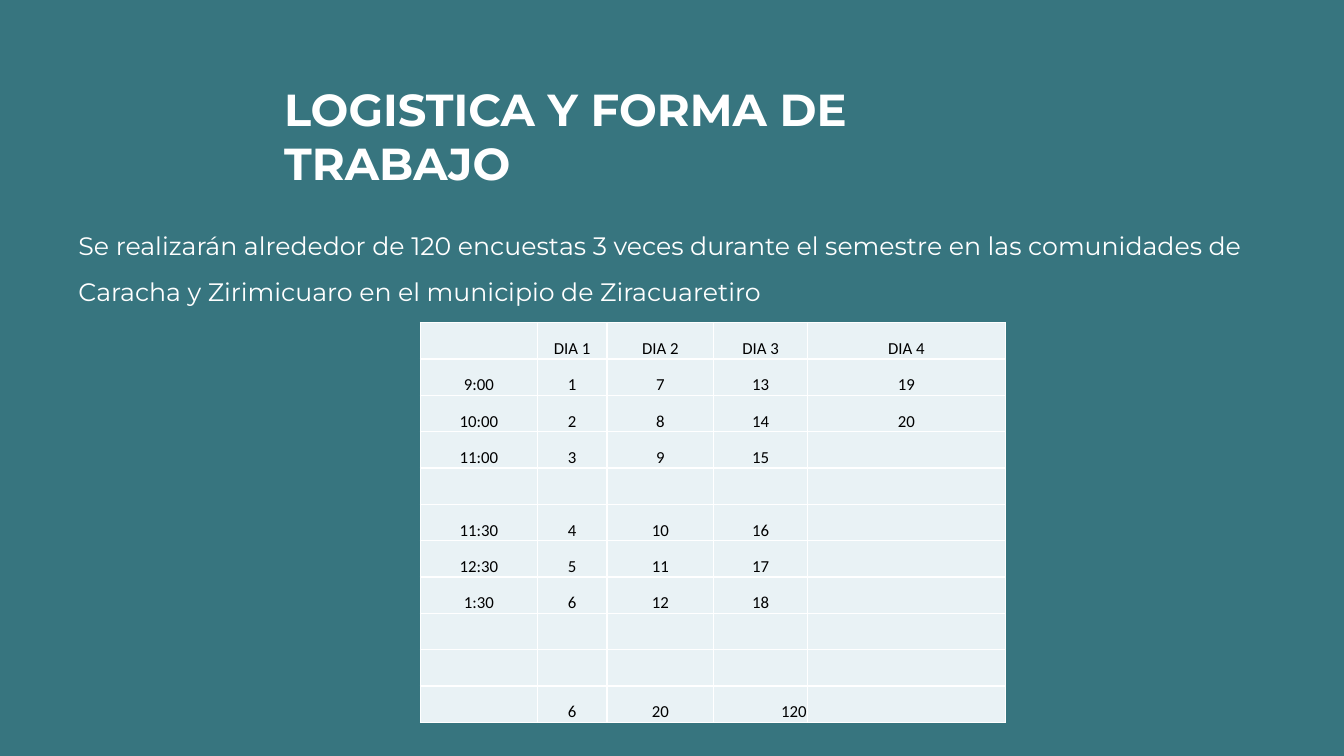
import pptx
import pptx.dml.color
import pptx.enum.text
import pptx.oxml.ns
import pptx.util
from lxml import etree
from pptx.util import Inches

COLORS = {"background": "37757F", "light": "FFFFFF", "cell": "E9F2F5", "dark": "000000"}
ALIGN = pptx.enum.text.PP_ALIGN


def rgb(name):
    return pptx.dml.color.RGBColor.from_string(COLORS[name])


class SlideBuilder:
    def __init__(self, presentation):
        self.slide = presentation.slides.add_slide(presentation.slide_layouts[6])
        fill = self.slide.background.fill
        fill.solid()
        fill.fore_color.rgb = rgb("background")

    def run(self, paragraph, text, size, font, color, bold=False):
        run = paragraph.add_run()
        run.text = text
        run.font.size = pptx.util.Pt(size)
        run.font.name = font
        run.font.bold = bold
        run.font.color.rgb = rgb(color)

    def text(self, left, top, width, height, lines, size, bold=False, spacing=None):
        box = self.slide.shapes.add_textbox(
            Inches(left), Inches(top), Inches(width), Inches(height))
        frame = box.text_frame
        frame.word_wrap = True
        frame.auto_size = pptx.enum.text.MSO_AUTO_SIZE.SHAPE_TO_FIT_TEXT
        for index, line in enumerate(lines):
            paragraph = frame.add_paragraph() if index else frame.paragraphs[0]
            paragraph.line_spacing = spacing
            self.run(paragraph, line, size, "Montserrat", "light", bold)

    def borders(self, cell):
        properties = cell._tc.get_or_add_tcPr()
        qn = pptx.oxml.ns.qn
        for side in ("a:lnL", "a:lnR", "a:lnT", "a:lnB"):
            line = etree.SubElement(properties, qn(side), w=str(pptx.util.Pt(1)))
            fill = etree.SubElement(line, qn("a:solidFill"))
            etree.SubElement(fill, qn("a:srgbClr"), val=COLORS["light"])

    def cell(self, cell, text, align):
        self.borders(cell)
        cell.fill.solid()
        cell.fill.fore_color.rgb = rgb("cell")
        cell.margin_left = cell.margin_right = cell.margin_top = Inches(0.01)
        cell.margin_bottom = 0
        cell.vertical_anchor = pptx.enum.text.MSO_ANCHOR.BOTTOM
        paragraph = cell.text_frame.paragraphs[0]
        paragraph.alignment = align
        if text:
            self.run(paragraph, text, 12, "Calibri", "dark")

    def table(self, left, top, height, widths, rows, right_aligned):
        shape = self.slide.shapes.add_table(
            len(rows), len(widths), Inches(left), Inches(top),
            Inches(sum(widths)), Inches(height))
        table = shape.table
        table.first_row = table.horz_banding = False
        for column, width in zip(table.columns, widths):
            column.width = Inches(width)
        for row_index, row in enumerate(rows):
            table.rows[row_index].height = Inches(height / len(rows))
            for column_index, text in enumerate(row):
                position = (row_index, column_index)
                align = ALIGN.RIGHT if position in right_aligned else ALIGN.CENTER
                self.cell(table.cell(*position), text, align)


def main():
    presentation = pptx.Presentation()
    presentation.slide_width = Inches(13.33)
    presentation.slide_height = Inches(7.5)
    builder = SlideBuilder(presentation)

    # Title and introduction
    builder.text(2.72, 0.76, 8, 0.64, ["LOGISTICA Y FORMA DE TRABAJO"], 32, bold=True)
    builder.text(0.68, 2.09, 11.98, 1.31, [
        "Se realizarán alrededor de 120 encuestas 3 veces durante el semestre"
        " en las comunidades de",
        "Caracha y Zirimicuaro en el municipio de Ziracuaretiro",
    ], 18, spacing=1.5)

    # Survey schedule
    blank = [""] * 5
    schedule = [
        ["", "DIA 1", "DIA 2", "DIA 3", "DIA 4"],
        ["9:00", "1", "7", "13", "19"],
        ["10:00", "2", "8", "14", "20"],
        ["11:00", "3", "9", "15", ""],
        blank,
        ["11:30", "4", "10", "16", ""],
        ["12:30", "5", "11", "17", ""],
        ["1:30", "6", "12", "18", ""],
        blank,
        blank,
        ["", "6", "20", "120", ""],
    ]
    builder.table(4.17, 3.2, 3.97, [1.16, 0.69, 1.06, 0.93, 1.96], schedule, {(10, 3)})

    presentation.save("out.pptx")


if __name__ == "__main__":
    main()
